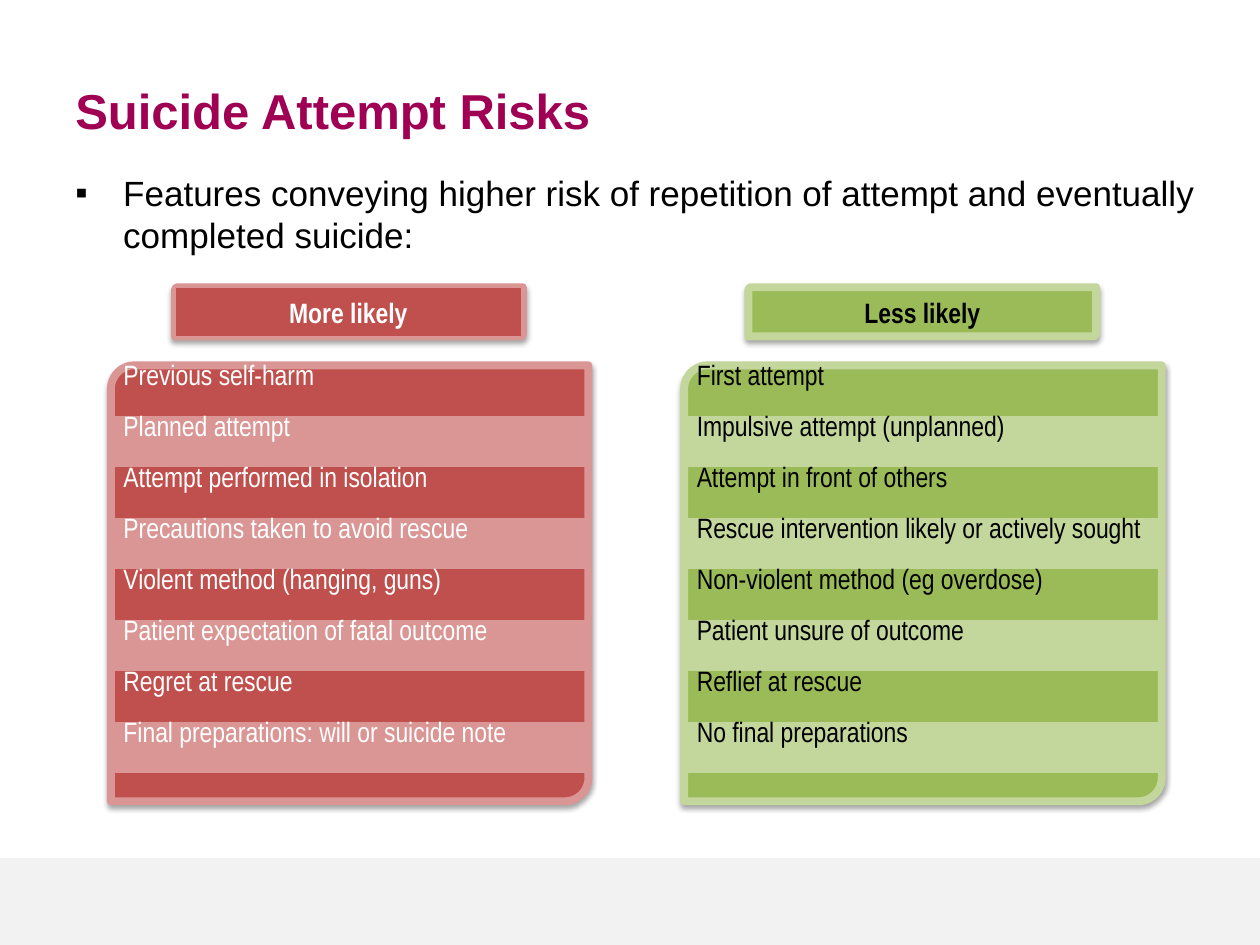
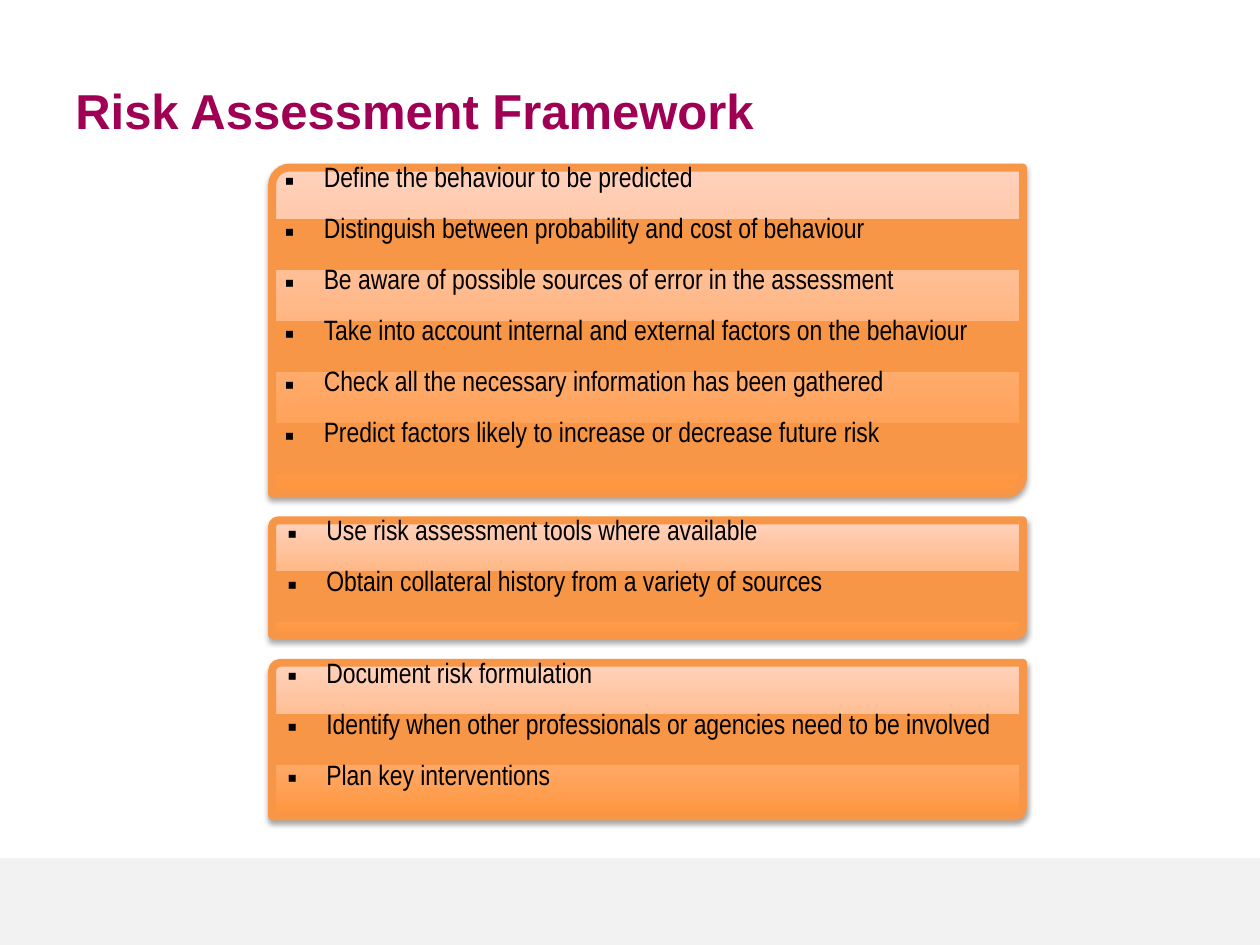
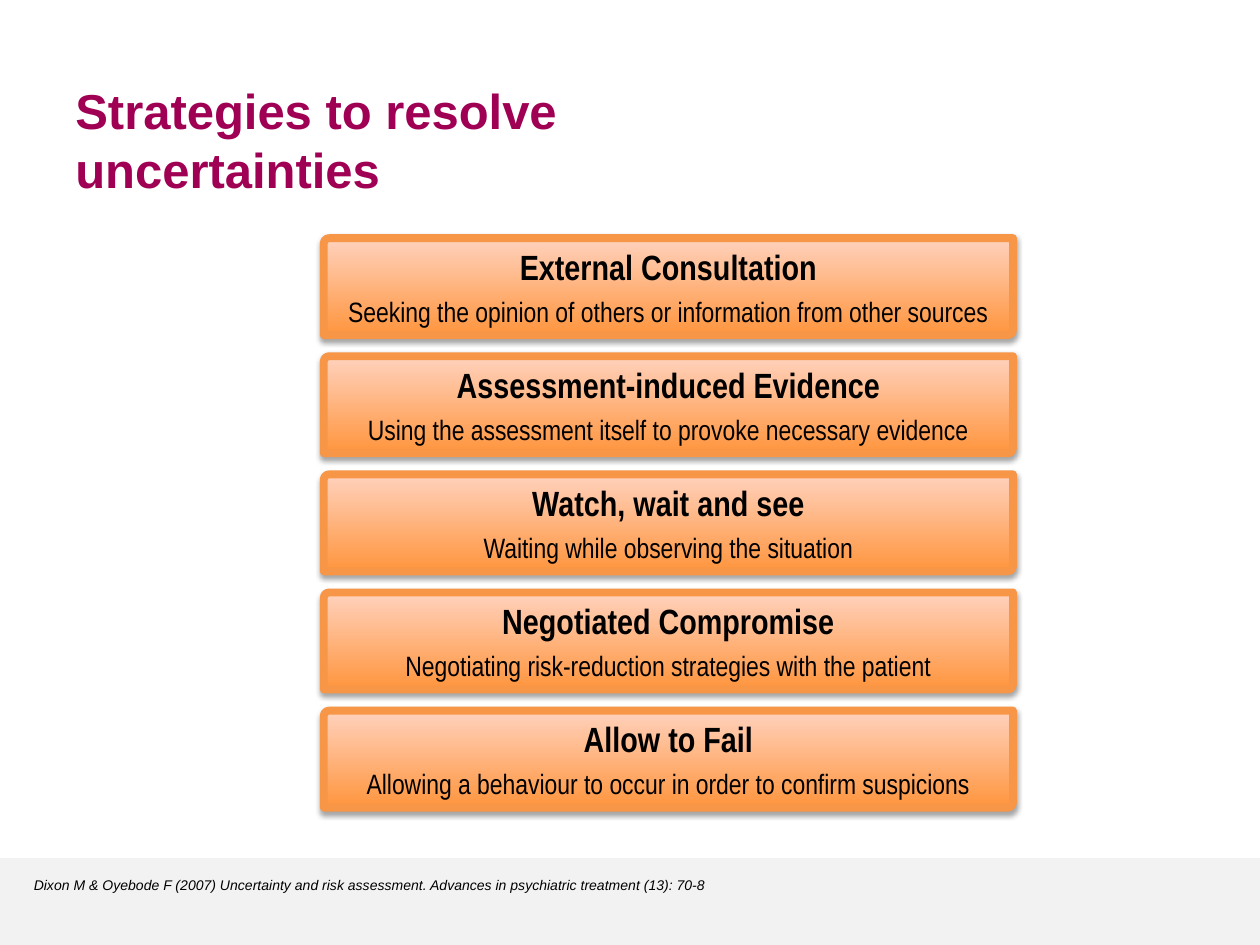
from dataclasses import dataclass

from lxml import etree
from pptx import Presentation
from pptx.dml.color import RGBColor
from pptx.enum.shapes import MSO_SHAPE
from pptx.enum.text import MSO_ANCHOR, PP_ALIGN
from pptx.oxml.ns import qn
from pptx.util import Inches, Pt

RECTANGLE = MSO_SHAPE.RECTANGLE
DIAGONAL_ROUND = MSO_SHAPE.ROUND_2_DIAG_RECTANGLE
CENTER, LEFT = PP_ALIGN.CENTER, PP_ALIGN.LEFT
TOP, MIDDLE = MSO_ANCHOR.TOP, MSO_ANCHOR.MIDDLE
PLAIN_TABLE = "{2D5ABB26-0587-4C30-8999-92F81FD0307C}"
ROW_HEIGHT = Inches(0.81) // 2


@dataclass(frozen=True)
class Palette:
    """Fill (one colour, or bottom and top of a gradient), edge and text."""
    fill: tuple
    edge: str
    text: str


@dataclass(frozen=True)
class Theme:
    title_color: str = "A00054"
    text_color: str = "000000"
    band_color: str = "F2F2F2"
    red: Palette = Palette(("C0504D",), "D99694", "FFFFFF")
    green: Palette = Palette(("9BBB59",), "C3D69B", "000000")
    orange: Palette = Palette(("FF953E", "FFD2BD"), "F79646", "000000")
    font: str = "Arial"
    narrow: str = "Arial Narrow"
    title_size: int = 28
    lead_size: int = 20
    body_size: int = 16
    reference_size: int = 8
    edge_width: float = 4.5


def rgb(color):
    return RGBColor.from_string(color)


class Deck:
    def __init__(self, theme):
        self.theme = theme
        self.deck = Presentation()
        self.deck.slide_width, self.deck.slide_height = Inches(10), Inches(7.5)
        self.page = None

    # Page with footer band and title
    def new_page(self, title):
        theme = self.theme
        self.page = self.deck.slides.add_slide(self.deck.slide_layouts[6])
        self.shape(RECTANGLE, 0, 6.81, 10, 0.69, (theme.band_color,))
        para = self.text(0.5, 0.59, 8.5, 0.74, title)
        self.style(para, theme.title_size, theme.title_color, bold=True)

    # Text
    def style(self, para, size, color, name=None, bold=False, italic=False,
              align=LEFT):
        para.alignment = align
        font = para.font
        font.name = name or self.theme.font
        font.size = Pt(size)
        font.bold, font.italic = bold, italic
        font.color.rgb = rgb(color)

    def text(self, left, top, width, height, content):
        box = self.page.shapes.add_textbox(
            Inches(left), Inches(top), Inches(width), Inches(height))
        frame = box.text_frame
        frame.word_wrap = True
        frame.vertical_anchor = TOP
        frame.text = content
        return frame.paragraphs[0]

    def bullet(self, para, indent):
        props = para._p.get_or_add_pPr()
        props.set("marL", str(Inches(indent)))
        props.set("indent", str(-Inches(indent)))
        etree.SubElement(props, qn("a:buFont"), typeface=self.theme.font)
        etree.SubElement(props, qn("a:buChar"), char="▪")

    # Shapes
    def shape(self, kind, left, top, width, height, fill, edge=None,
              edge_width=0):
        shape = self.page.shapes.add_shape(
            kind, Inches(left), Inches(top), Inches(width), Inches(height))
        shape.shadow.inherit = False
        if len(fill) == 1:
            shape.fill.solid()
            shape.fill.fore_color.rgb = rgb(fill[0])
        else:
            shape.fill.gradient()
            shape.fill.gradient_angle = 90
            for stop, position, color in zip(
                    shape.fill.gradient_stops, (0, 1), fill):
                stop.position = position
                stop.color.rgb = rgb(color)
        if edge:
            shape.line.color.rgb = rgb(edge)
            shape.line.width = Pt(edge_width)
        else:
            shape.line.fill.background()
        return shape

    def panel(self, left, top, width, height, palette):
        """Frame with two rounded corners, a thick edge and a soft shadow."""
        panel = self.shape(DIAGONAL_ROUND, left, top, width, height,
                           palette.fill, palette.edge, self.theme.edge_width)
        panel.adjustments[0], panel.adjustments[1] = 0.054, 0
        effects = panel._element.spPr.find(qn("a:effectLst"))
        shadow = etree.SubElement(
            effects, qn("a:outerShdw"), blurRad=str(Pt(3.1)),
            dist=str(Pt(1.8)), dir="5400000", rotWithShape="0")
        color = etree.SubElement(shadow, qn("a:srgbClr"), val="000000")
        etree.SubElement(color, qn("a:alpha"), val="35000")
        return panel

    def label(self, shape, palette, heading, size, detail=None):
        frame = shape.text_frame
        frame.word_wrap = True
        frame.vertical_anchor = MIDDLE
        para = frame.paragraphs[0]
        para.text = heading
        self.style(para, size, palette.text, self.theme.narrow, bold=True,
                   align=CENTER)
        if detail:
            para = frame.add_paragraph()
            para.text = detail
            para.space_before = Pt(4)
            self.style(para, self.theme.body_size, palette.text,
                       self.theme.narrow, align=CENTER)

    # Table whose odd rows let the panel behind show through
    def striped_list(self, left, top, width, rows, palette, indent=0):
        table = self.page.shapes.add_table(
            len(rows), 1, Inches(left), Inches(top), Inches(width),
            ROW_HEIGHT * len(rows)).table
        table.first_row = table.horz_banding = False
        table._tbl.tblPr.find(qn("a:tableStyleId")).text = PLAIN_TABLE
        for index, content in enumerate(rows):
            table.rows[index].height = ROW_HEIGHT
            cell = table.cell(index, 0)
            cell.margin_top = cell.margin_bottom = 0
            if index % 2:
                cell.fill.solid()
                cell.fill.fore_color.rgb = rgb(palette.edge)
            else:
                cell.fill.background()
            cell.text = content
            para = cell.text_frame.paragraphs[0]
            if indent:
                self.bullet(para, indent)
            self.style(para, self.theme.body_size, palette.text,
                       self.theme.narrow)


def attempt_risks(deck):
    theme = deck.theme
    deck.new_page("Suicide Attempt Risks")
    lead = deck.text(0.5, 1.31, 9.1, 0.65,
                     "Features conveying higher risk of repetition of attempt "
                     "and eventually completed suicide:")
    deck.bullet(lead, 0.38)
    deck.style(lead, theme.lead_size, theme.text_color)

    more_likely = [
        "Previous self-harm", "Planned attempt",
        "Attempt performed in isolation",
        "Precautions taken to avoid rescue",
        "Violent method (hanging, guns)",
        "Patient expectation of fatal outcome", "Regret at rescue",
        "Final preparations: will or suicide note"]
    less_likely = [
        "First attempt", "Impulsive attempt (unplanned)",
        "Attempt in front of others",
        "Rescue intervention likely or actively sought",
        "Non-violent method (eg overdose)", "Patient unsure of outcome",
        "Reflief at rescue", "No final preparations"]
    columns = [(0.88, 1.39, theme.red, "More likely", more_likely),
               (5.43, 5.94, theme.green, "Less likely", less_likely)]
    for left, header_left, palette, heading, rows in columns:
        deck.panel(left, 2.9, 3.79, 3.46, palette)
        deck.striped_list(left, 2.9, 3.79, rows, palette)
        header = deck.panel(header_left, 2.28, 2.76, 0.39, palette)
        if palette is theme.red:  # a plate narrows the edge of this header
            header = deck.shape(RECTANGLE, header_left, 2.28, 2.75, 0.39,
                                palette.fill, palette.edge, 0.75)
        deck.label(header, palette, heading, theme.body_size)


def assessment_framework(deck):
    palette = deck.theme.orange
    deck.new_page("Risk Assessment Framework")
    # Panel top and height, list left, list rows
    stages = [
        (1.33, 2.59, 2.16, [
            "Define the behaviour to be predicted",
            "Distinguish between probability and cost of behaviour",
            "Be aware of possible sources of error in the assessment",
            "Take into account internal and external factors on the behaviour",
            "Check all the necessary information has been gathered",
            "Predict factors likely to increase or decrease future risk"]),
        (4.13, 0.91, 2.18, [
            "Use risk assessment tools where available",
            "Obtain collateral history from a variety of sources"]),
        (5.26, 1.22, 2.18, [
            "Document risk formulation",
            "Identify when other professionals or agencies need to be involved",
            "Plan key interventions"])]
    for top, height, list_left, rows in stages:
        deck.panel(2.16, top, 5.96, height, palette)
        deck.striped_list(list_left, top, 5.96, rows, palette, indent=0.31)


def uncertainty_strategies(deck):
    theme = deck.theme
    deck.new_page("Strategies to resolve\vuncertainties")
    strategies = [
        ("External Consultation",
         "Seeking the opinion of others or information from other sources"),
        ("Assessment-induced Evidence",
         "Using the assessment itself to provoke necessary evidence"),
        ("Watch, wait and see", "Waiting while observing the situation"),
        ("Negotiated Compromise",
         "Negotiating risk-reduction strategies with the patient"),
        ("Allow to Fail",
         "Allowing a behaviour to occur in order to confirm suspicions")]
    first, last = 1.89, 5.64
    step = (last - first) / (len(strategies) - 1)
    for index, (heading, detail) in enumerate(strategies):
        panel = deck.panel(2.57, first + index * step, 5.47, 0.77,
                           theme.orange)
        deck.label(panel, theme.orange, heading, theme.lead_size, detail)
    reference = deck.text(0.17, 6.91, 8.36, 0.24,
                          "Dixon M & Oyebode F (2007) Uncertainty and risk "
                          "assessment. Advances in psychiatric treatment "
                          "(13): 70-8")
    deck.style(reference, theme.reference_size, theme.text_color, italic=True)


def main():
    deck = Deck(Theme())
    attempt_risks(deck)
    assessment_framework(deck)
    uncertainty_strategies(deck)
    deck.deck.save("out.pptx")


if __name__ == "__main__":
    main()
